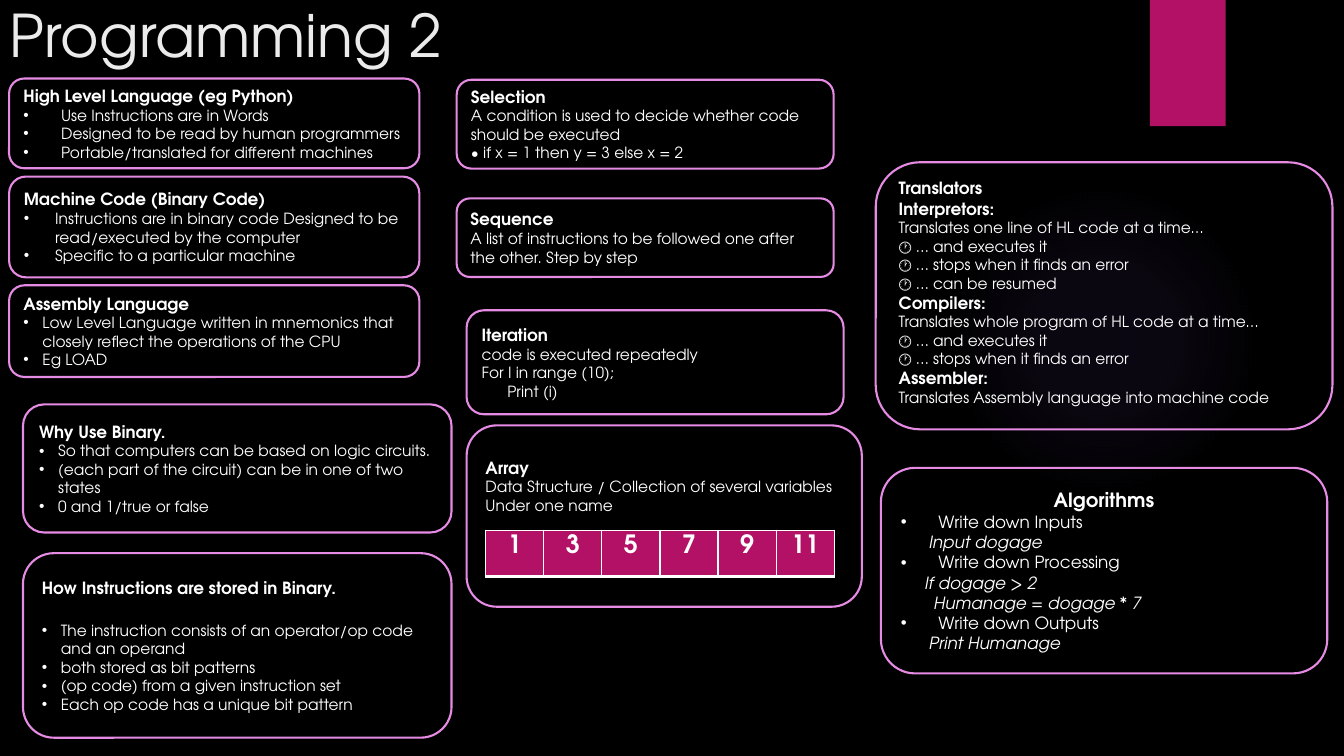
from lxml import etree
from pptx import Presentation
from pptx import util as u
from pptx.dml.color import RGBColor
from pptx.enum import shapes, text
from pptx.oxml import parse_xml
from pptx.oxml.ns import nsdecls, qn

FONT = "TeX Gyre Adventor"
WHITE, PINK, MAGENTA, GLOW = "FFFFFF", "E68BE3", "B31166", "9B6BF2"
LEFT, CENTER = text.PP_ALIGN.LEFT, text.PP_ALIGN.CENTER


def colour(code):
    return RGBColor.from_string(code)


def apply(target, values):
    for name, value in values.items():
        setattr(target, name, value)


# Kinds of line: each gives the format values of one paragraph
def head(words, size=12, align=LEFT):
    return dict(words=words, size=size, bold=True, align=align)


def plain(words, indent=0, size=11, italic=False):
    return dict(words=words, size=size, indent=indent, italic=italic)


def bullets(indent, *items, size=11, before=0):
    return [dict(words=item, size=size, indent=indent, bullet=True,
                 before=0 if number else before)
            for number, item in enumerate(items)]


def write_line(para, words, size, bold=False, italic=False, align=LEFT,
               indent=0, bullet=False, before=0, tint=WHITE):
    para.alignment = align
    if indent:
        properties = para._p.get_or_add_pPr()
        properties.set("marL", str(u.Cm(indent)))
        if bullet:
            properties.set("indent", str(-u.Cm(indent)))
            etree.SubElement(properties, qn("a:buFont")).set("typeface", "Arial")
            etree.SubElement(properties, qn("a:buChar")).set("char", "•")
    if before:
        para.space_before = u.Pt(before)
    span = para.add_run()
    span.text = words
    apply(span.font, dict(name=FONT, size=u.Pt(size), bold=bold, italic=italic))
    span.font.color.rgb = colour(tint)


def write_lines(frame, lines):
    for number, line in enumerate(lines):
        para = frame.add_paragraph() if number else frame.paragraphs[0]
        write_line(para, **line)


def add_block(page, kind, place, fill=None):
    block = page.shapes.add_shape(kind, *map(u.Cm, place))
    block.shadow.inherit = False
    block.line.fill.background()
    if fill:
        block.fill.solid()
        block.fill.fore_color.rgb = colour(fill)
    else:
        block.fill.background()
    return block


def add_glow(page, place):
    glow = add_block(page, shapes.MSO_SHAPE.OVAL, place)
    stops = "".join(
        f'<a:gs pos="{position * 1000}"><a:srgbClr val="{GLOW}">'
        f'<a:alpha val="{alpha * 1000}"/></a:srgbClr></a:gs>'
        for position, alpha in ((0, 7), (36, 6), (69, 0)))
    gradient = parse_xml(
        f'<a:gradFill {nsdecls("a")}><a:gsLst>{stops}</a:gsLst><a:path path="circle">'
        '<a:fillToRect l="50000" t="50000" r="50000" b="50000"/></a:path></a:gradFill>')
    empty = glow._element.spPr.find(qn("a:noFill"))
    empty.getparent().replace(empty, gradient)


def add_title(page, place, words):
    box = page.shapes.add_textbox(*map(u.Cm, place))
    box.text_frame.word_wrap = True
    write_lines(box.text_frame, [dict(words=words, size=42, tint="EBEBEB")])


def add_panel(page, place, lines, top=0.13, bottom=0.13):
    panel = add_block(page, shapes.MSO_SHAPE.ROUNDED_RECTANGLE, place)
    panel.line.color.rgb = colour(PINK)
    panel.line.width = u.Pt(1.5)
    apply(panel.text_frame, dict(
        word_wrap=True, vertical_anchor=text.MSO_ANCHOR.MIDDLE,
        margin_top=u.Cm(top), margin_bottom=u.Cm(bottom)))
    write_lines(panel.text_frame, lines)


def add_array(page, place, values):
    table = page.shapes.add_table(1, len(values), *map(u.Cm, place)).table
    apply(table, dict(first_row=False, horz_banding=False))
    for cell, value in zip(table.rows[0].cells, values):
        properties = cell._tc.get_or_add_tcPr()
        for side, width in dict(L=1, R=1, T=1, B=3).items():
            properties.append(parse_xml(
                f'<a:ln{side} {nsdecls("a")} w="{u.Pt(width)}"><a:solidFill>'
                f'<a:srgbClr val="{WHITE}"/></a:solidFill></a:ln{side}>'))
        cell.fill.solid()
        cell.fill.fore_color.rgb = colour(MAGENTA)
        write_lines(cell.text_frame, [head(str(value), 18, CENTER)])


def main():
    deck = Presentation()
    apply(deck, dict(slide_width=u.Cm(33.87), slide_height=u.Cm(19.05)))
    page = deck.slides.add_slide(deck.slide_layouts[6])
    page.background.fill.solid()
    page.background.fill.fore_color.rgb = colour("000000")

    # Backdrop and title
    add_glow(page, (23.9, 4.65, 7.82, 7.82))
    add_block(page, shapes.MSO_SHAPE.RECTANGLE, (28.98, 0, 1.91, 3.18), MAGENTA)
    add_title(page, (0, -0.15, 11.89, 2.74), "Programming 2")

    # Left column: languages and binary
    add_panel(page, (0.23, 1.98, 10.34, 2.26), [
        head("High Level Language (eg Python)"),
        *bullets(0.95, "Use Instructions are in Words",
                 "Designed to be read by human programmers",
                 "Portable/translated for different machines")])
    add_panel(page, (0.23, 4.45, 10.34, 2.54), [
        head("Machine Code (Binary Code)"),
        *bullets(0.79, "Instructions are in binary code Designed to be "
                 "read/executed by the computer",
                 "Specific to a particular machine")])
    add_panel(page, (0.23, 7.19, 10.34, 2.31), [
        head("Assembly Language"),
        *bullets(0.48, "Low Level Language written in mnemonics that "
                 "closely reflect the operations of the CPU",
                 "Eg LOAD")])
    add_panel(page, (0.58, 10.19, 10.8, 3.23), [
        head("Why Use Binary."),
        *bullets(0.48, "So that computers can be based on logic circuits.",
                 "(each part of the circuit) can be in one of two states",
                 "0 and 1/true or false")])
    add_panel(page, (0.58, 13.94, 10.8, 4.65), [
        head("How Instructions are stored in Binary."),
        *bullets(0.48, "The instruction consists of an operator/op code and an operand",
                 "both stored as bit patterns",
                 "(op code) from a given instruction set",
                 "Each op code has a unique bit pattern", before=16.8)])

    # Middle column: constructs and array
    add_panel(page, (11.51, 2.01, 9.5, 2.24), [
        head("Selection"),
        plain("A condition is used to decide whether code should be executed"),
        plain("• if x = 1 then y = 3 else x = 2")])
    add_panel(page, (11.51, 5, 9.5, 1.98), [
        head("Sequence"),
        plain("A list of instructions to be followed one after the other. Step by step")])
    add_panel(page, (11.76, 7.82, 9.5, 2.62), [
        head("Iteration"),
        plain("code is executed repeatedly"),
        plain("For I in range (10);"),
        plain("Print (i)", indent=0.65)])
    add_panel(page, (11.76, 10.72, 9.96, 4.57), [
        head("Array"),
        plain("Data Structure / Collection of several variables"),
        plain("Under one name")], bottom=1.65)
    add_array(page, (12.24, 13.36, 8.79, 1.17), range(1, 12, 2))

    # Right column: translators and algorithms
    executes, stops = "🕐 … and executes it", "🕐 … stops when it finds an error"
    add_panel(page, (22.07, 4.09, 11.51, 6.73), [
        head("Translators"),
        head("Interpretors:"),
        plain("Translates one line of HL code at a time…"),
        plain(executes), plain(stops), plain("🕐 … can be resumed"),
        head("Compilers:"),
        plain("Translates whole program of HL code at a time…"),
        plain(executes), plain(stops),
        head("Assembler:"),
        plain("Translates Assembly language into machine code")], top=0, bottom=0.17)
    add_panel(page, (22.2, 11.79, 11.25, 5.18), [
        head("Algorithms", 14, CENTER),
        *bullets(0.95, "Write down Inputs", size=12),
        plain("Input dogage", 0.71, 12, True),
        *bullets(0.95, "Write down Processing", size=12),
        plain("If dogage > 2", 0.6, 12, True),
        plain("Humanage = dogage * 7", 0.83, 12, True),
        *bullets(0.95, "Write down Outputs", size=12),
        plain("Print Humanage", 0.71, 12, True)])

    deck.save("out.pptx")


if __name__ == "__main__":
    main()
